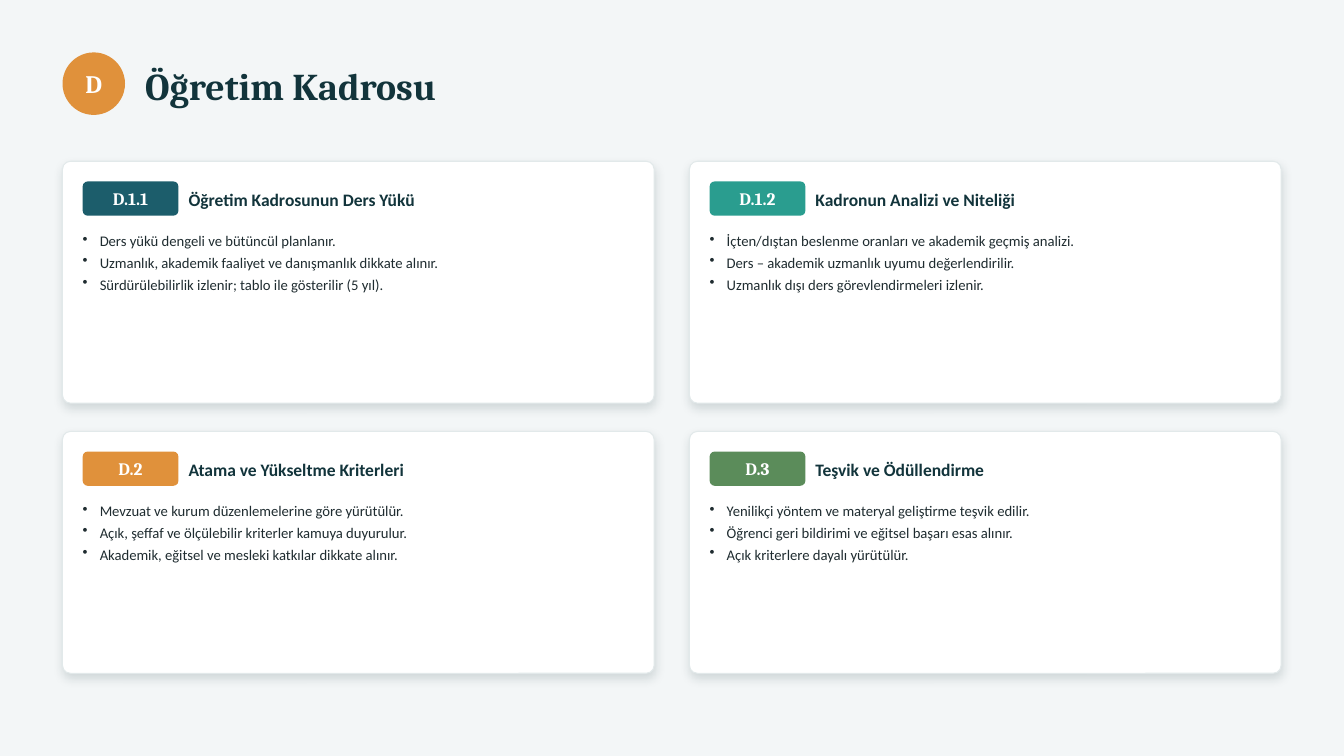
from lxml.etree import SubElement
from pptx import Presentation
from pptx.dml.color import RGBColor
from pptx.enum.shapes import MSO_SHAPE
from pptx.enum.text import MSO_ANCHOR, MSO_AUTO_SIZE, PP_ALIGN
from pptx.oxml.ns import qn
from pptx.util import Pt

# Content
SECTION = ("D", "Öğretim Kadrosu")
CARDS = [
    ("D.1.1", "petrol", "Öğretim Kadrosunun Ders Yükü", [
        "Ders yükü dengeli ve bütüncül planlanır.",
        "Uzmanlık, akademik faaliyet ve danışmanlık dikkate alınır.",
        "Sürdürülebilirlik izlenir; tablo ile gösterilir (5 yıl).",
    ]),
    ("D.1.2", "teal", "Kadronun Analizi ve Niteliği", [
        "İçten/dıştan beslenme oranları ve akademik geçmiş analizi.",
        "Ders – akademik uzmanlık uyumu değerlendirilir.",
        "Uzmanlık dışı ders görevlendirmeleri izlenir.",
    ]),
    ("D.2", "orange", "Atama ve Yükseltme Kriterleri", [
        "Mevzuat ve kurum düzenlemelerine göre yürütülür.",
        "Açık, şeffaf ve ölçülebilir kriterler kamuya duyurulur.",
        "Akademik, eğitsel ve mesleki katkılar dikkate alınır.",
    ]),
    ("D.3", "green", "Teşvik ve Ödüllendirme", [
        "Yenilikçi yöntem ve materyal geliştirme teşvik edilir.",
        "Öğrenci geri bildirimi ve eğitsel başarı esas alınır.",
        "Açık kriterlere dayalı yürütülür.",
    ]),
]

COLORS = {
    "background": "F3F6F7", "white": "FFFFFF", "border": "E2E9EA",
    "heading": "12343B", "body": "1F2C30", "shadow": "0C2A30",
    "petrol": "1C5D6B", "teal": "2A9D8F", "orange": "E0913B", "green": "5B8C5A",
}
SERIF, SANS = "Cambria", "Calibri"

# Measures in points
SLIDE_W, SLIDE_H = 960, 540
MARGIN, CARDS_TOP = 44.64, 115.2
CARD_W, CARD_H = 422.64, 172.8
GAP_X, GAP_Y = 25.2, 20.16
PADDING = 14.4
CIRCLE = 44.64
TAG_W, TAG_H = 68.4, 24.48
HEADING_X = PADDING + TAG_W + 7.2
INDENT = 12.24


def rgb(name):
    return RGBColor.from_string(COLORS[name])


def add_block(kind, left, top, width, height, fill, radius=None):
    block = slide.shapes.add_shape(kind, Pt(left), Pt(top), Pt(width), Pt(height))
    block.fill.solid()
    block.fill.fore_color.rgb = rgb(fill)
    block.line.fill.background()
    block.shadow.inherit = False
    if radius is not None:
        block.adjustments[0] = radius
    return block


def add_text_box(left, top, width, height):
    return slide.shapes.add_textbox(Pt(left), Pt(top), Pt(width), Pt(height))


def write(holder, *lines, size, color, font=SANS, bold=False,
          align=PP_ALIGN.LEFT, anchor=MSO_ANCHOR.MIDDLE, bullet=None, after=0):
    frame = holder.text_frame
    frame.word_wrap = True
    frame.auto_size = MSO_AUTO_SIZE.NONE
    frame.vertical_anchor = anchor
    frame.margin_left = frame.margin_top = frame.margin_right = frame.margin_bottom = 0
    for number, line in enumerate(lines):
        paragraph = frame.add_paragraph() if number else frame.paragraphs[0]
        paragraph.alignment = align
        if after:
            paragraph.space_after = Pt(after)
        if bullet:
            properties = paragraph._p.get_or_add_pPr()
            properties.set("marL", str(Pt(INDENT)))
            properties.set("indent", str(-Pt(INDENT)))
            SubElement(properties, qn("a:buChar"), char=bullet)
        run = paragraph.add_run()
        run.text = line
        run.font.name = font
        run.font.size = Pt(size)
        run.font.bold = bold
        run.font.color.rgb = rgb(color)


def add_soft_shadow(block):
    effects = block._element.spPr.find(qn("a:effectLst"))
    shadow = SubElement(effects, qn("a:outerShdw"), blurRad=str(Pt(7)),
                        dist=str(Pt(3)), dir="5400000", algn="ctr", rotWithShape="0")
    tint = SubElement(shadow, qn("a:srgbClr"), val=COLORS["shadow"])
    SubElement(tint, qn("a:alpha"), val="14000")


def add_card(left, top, code, accent, heading, points):
    card = add_block(MSO_SHAPE.ROUNDED_RECTANGLE, left, top, CARD_W, CARD_H, "white", 0.033)
    card.line.color.rgb = rgb("border")
    card.line.width = Pt(0.75)
    add_soft_shadow(card)

    tag = add_block(MSO_SHAPE.ROUNDED_RECTANGLE, left + PADDING, top + PADDING,
                    TAG_W, TAG_H, accent, 0.147)
    write(tag, code, size=12.5, color="white", font=SERIF, bold=True, align=PP_ALIGN.CENTER)

    heading_box = add_text_box(left + HEADING_X, top + 12.96,
                               CARD_W - HEADING_X - PADDING, 28.8)
    write(heading_box, heading, size=12.5, color="heading", bold=True)

    points_box = add_text_box(left + PADDING, top + 50.4, CARD_W - 2 * PADDING, 108)
    write(points_box, *points, size=10.5, color="body", anchor=MSO_ANCHOR.TOP,
          bullet="•", after=3)


# Slide
deck = Presentation()
deck.slide_width, deck.slide_height = Pt(SLIDE_W), Pt(SLIDE_H)
slide = deck.slides.add_slide(deck.slide_layouts[5])
slide.background.fill.solid()
slide.background.fill.fore_color.rgb = rgb("background")

# Section letter and title
letter, section_title = SECTION
circle = add_block(MSO_SHAPE.OVAL, MARGIN, 37.44, CIRCLE, CIRCLE, "orange")
write(circle, letter, size=18, color="white", font=SERIF, bold=True, align=PP_ALIGN.CENTER)

title = slide.shapes.title
title.left, title.top, title.width, title.height = Pt(103.68), Pt(36), Pt(811.44), Pt(50.4)
write(title, section_title, size=27, color="heading", font=SERIF, bold=True)

# Two by two grid of cards
for index, card_content in enumerate(CARDS):
    row, column = divmod(index, 2)
    add_card(MARGIN + column * (CARD_W + GAP_X),
             CARDS_TOP + row * (CARD_H + GAP_Y), *card_content)

deck.save("out.pptx")
